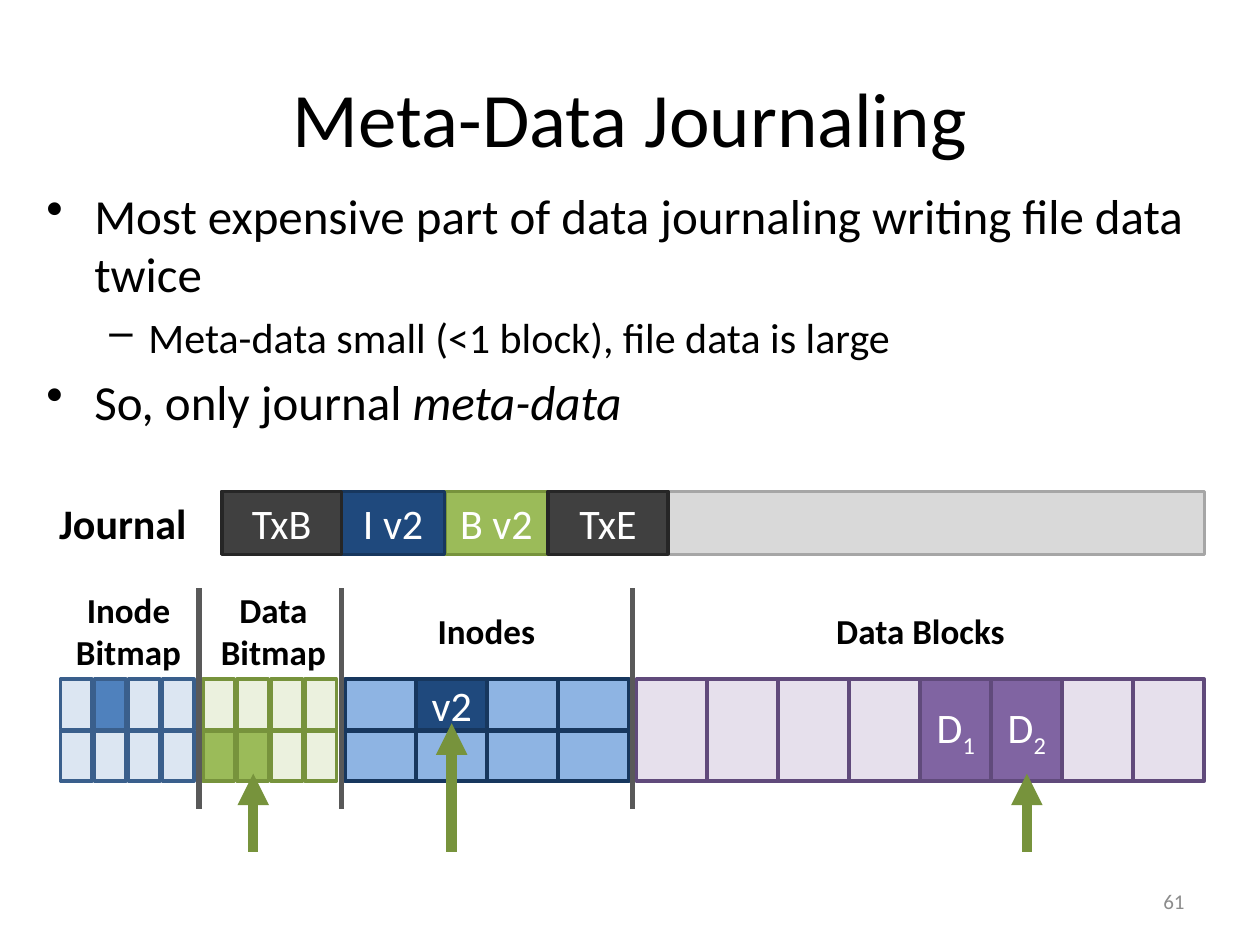
from pptx import Presentation
from pptx.dml.color import RGBColor
from pptx.enum.shapes import MSO_CONNECTOR, MSO_SHAPE
from pptx.enum.text import MSO_ANCHOR, PP_ALIGN
from pptx.oxml.ns import qn
from pptx.util import Inches, Pt
from lxml.etree import SubElement

FONT = "Calibri"
COLORS = {
    "black": "000000", "white": "FFFFFF", "number": "8C8C8C",
    "journal": "D9D9D9", "journal_edge": "A6A6A6",
    "transaction": "404040", "transaction_edge": "262626",
    "inode_bit": "DCE6F2", "inode_bit_used": "4F81BD", "inode_bit_edge": "3A5F8C",
    "data_bit": "EBF1DE", "data_bit_used": "9BBB59", "data_bit_edge": "77933C",
    "inode": "8EB4E3", "inode_used": "1F497D", "inode_edge": "17375E",
    "block": "E6E0EC", "block_used": "8064A2", "block_edge": "604A7B",
    "divider": "595959",
}
JOURNAL_TOP, JOURNAL_HEIGHT = 3.9, 0.5
DISK_TOP, ROW_PITCH, ROW_HEIGHT = 5.39, 0.41, 0.4
BLOCK_HEIGHT = ROW_PITCH + ROW_HEIGHT
BIT_PITCH, BIT_WIDTH = 0.27, 0.25
BLOCK_WIDTH = 0.5635


def color(name):
    return RGBColor.from_string(COLORS[name])


def style(para, size, shade="black", align=PP_ALIGN.LEFT, bold=False):
    para.alignment = align
    para.font.name = FONT
    para.font.size = Pt(size)
    para.font.bold = bold
    para.font.color.rgb = color(shade)


def add_text(page, area, lines, size, wrap=False, anchor=MSO_ANCHOR.TOP, **look):
    frame = page.shapes.add_textbox(*map(Inches, area)).text_frame
    frame.word_wrap = wrap
    frame.vertical_anchor = anchor
    frame.text = "\n".join(lines)
    for para in frame.paragraphs:
        style(para, size, **look)
    return frame


def add_block(page, area, fill, edge, text="", subscript=""):
    block = page.shapes.add_shape(MSO_SHAPE.RECTANGLE, *map(Inches, area))
    block.shadow.inherit = False
    block.fill.solid()
    block.fill.fore_color.rgb = color(fill)
    block.line.color.rgb = color(edge)
    block.line.width = Pt(2)
    if text:
        block.text_frame.vertical_anchor = MSO_ANCHOR.MIDDLE
        para = block.text_frame.paragraphs[0]
        para.add_run().text = text
        style(para, 24, "white", PP_ALIGN.CENTER)
        if subscript:
            span = para.add_run()
            span.text = subscript
            span._r.get_or_add_rPr().set("baseline", "-25000")


def add_grid(page, left, columns, rows, pitch, width, height, kind, used):
    for row in range(rows):
        for column in range(columns):
            area = (left + column * pitch, DISK_TOP + row * ROW_PITCH, width, height)
            label = used.get((row, column))
            fill = kind if label is None else f"{kind}_used"
            add_block(page, area, fill, f"{kind}_edge", *(label or ()))


def add_line(page, start, end, shade, width, arrow=False):
    line = page.shapes.add_connector(
        MSO_CONNECTOR.STRAIGHT, *map(Inches, (*start, *end)))
    line.line.color.rgb = color(shade)
    line.line.width = Pt(width)
    if arrow:
        SubElement(line.line._get_or_add_ln(), qn("a:tailEnd"), type="triangle")
    SubElement(line._element.spPr, qn("a:effectLst"))


def add_bullets(page, area, items):
    frame = add_text(page, area, [text for text, _ in items], 28, wrap=True)
    levels = [("•", 28, 0.38, 0.38), ("–", 24, 0.81, 0.31)]
    for para, (_, level) in zip(frame.paragraphs, items):
        mark, size, indent, hanging = levels[level]
        para.level = level
        para.font.size = Pt(size)
        para.space_before = Pt(size * 0.2)
        properties = para._p.get_or_add_pPr()
        properties.set("marL", str(Inches(indent)))
        properties.set("indent", str(-Inches(hanging)))
        bullet = properties.makeelement(qn("a:buChar"), {"char": mark})
        properties.find(qn("a:defRPr")).addprevious(bullet)
    return frame


def add_title(page, text):
    title = page.shapes.title
    title.left, title.top, title.width, title.height = map(Inches, (0.5, 0.3, 9, 1.25))
    title.text_frame.text = text
    title.text_frame.vertical_anchor = MSO_ANCHOR.MIDDLE
    style(title.text_frame.paragraphs[0], 44, align=PP_ALIGN.CENTER)


def add_journal(page):
    add_block(page, (1.76, JOURNAL_TOP, 7.8, JOURNAL_HEIGHT), "journal", "journal_edge")
    add_text(page, (0.37, JOURNAL_TOP, 1.22, JOURNAL_HEIGHT), ["Journal"], 24, bold=True)
    entries = [
        (3.53, 0.82, "data_bit_used", "data_bit_edge", "B v2"),
        (2.71, 0.82, "inode_used", "inode_edge", "I v2"),
        (1.76, 0.95, "transaction", "transaction_edge", "TxB"),
        (4.35, 0.95, "transaction", "transaction_edge", "TxE"),
    ]
    for left, width, fill, edge, text in entries:
        add_block(page, (left, JOURNAL_TOP, width, JOURNAL_HEIGHT), fill, edge, text)


def add_disk(page):
    bits = (4, 2, BIT_PITCH, BIT_WIDTH, ROW_HEIGHT)
    add_grid(page, 0.48, *bits, "inode_bit", {(0, 1): ()})
    add_grid(page, 1.61, *bits, "data_bit", {(1, 0): (), (1, 1): ()})
    add_grid(page, 2.74, 4, 2, BLOCK_WIDTH, BLOCK_WIDTH, ROW_HEIGHT, "inode",
             {(0, 1): ("v2",)})
    add_grid(page, 5.05, 8, 1, BLOCK_WIDTH, BLOCK_WIDTH, BLOCK_HEIGHT, "block",
             {(0, 4): ("D", "1"), (0, 5): ("D", "2")})

    labels = [
        ((0.5, 4.62, 1.04, 0.77), ["Inode", "Bitmap"]),
        ((1.65, 4.62, 1.04, 0.77), ["Data", "Bitmap"]),
        ((3.37, 4.79, 0.98, 0.44), ["Inodes"]),
        ((6.53, 4.79, 1.55, 0.44), ["Data Blocks"]),
    ]
    for area, lines in labels:
        add_text(page, area, lines, 20, align=PP_ALIGN.CENTER, bold=True)
    for x in (1.58, 2.71, 5.02):
        add_line(page, (x, 4.67), (x, 6.42), "divider", 3)
    for x, tip in ((3.585, 5.74), (2.01, 6.14), (8.15, 6.14)):
        add_line(page, (x, 6.76), (x, tip), "data_bit_edge", 6, arrow=True)


def main():
    deck = Presentation()
    deck.slide_width, deck.slide_height = Inches(10), Inches(7.5)
    page = deck.slides.add_slide(deck.slide_layouts[5])
    add_title(page, "Meta-Data Journaling")
    bullets = add_bullets(page, (0.27, 1.42, 9.49, 2.48), [
        ("Most expensive part of data journaling writing file data twice", 0),
        ("Meta-data small (<1 block), file data is large", 1),
        ("So, only journal ", 0),
    ])
    span = bullets.paragraphs[-1].add_run()
    span.text = "meta-data"
    span.font.italic = True
    add_text(page, (7.17, 6.95, 2.33, 0.4), ["61"], 12, wrap=True,
             anchor=MSO_ANCHOR.MIDDLE, shade="number", align=PP_ALIGN.RIGHT)
    add_journal(page)
    add_disk(page)
    deck.save("out.pptx")


if __name__ == "__main__":
    main()
